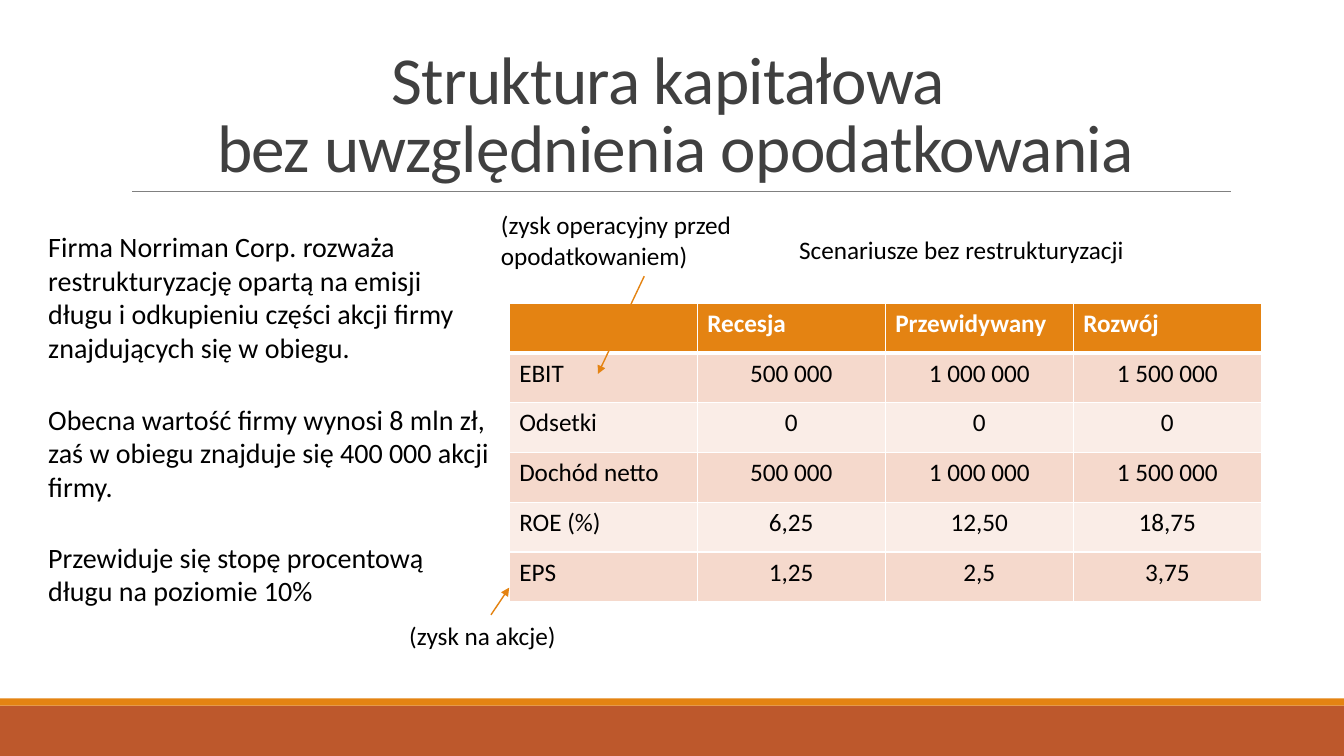
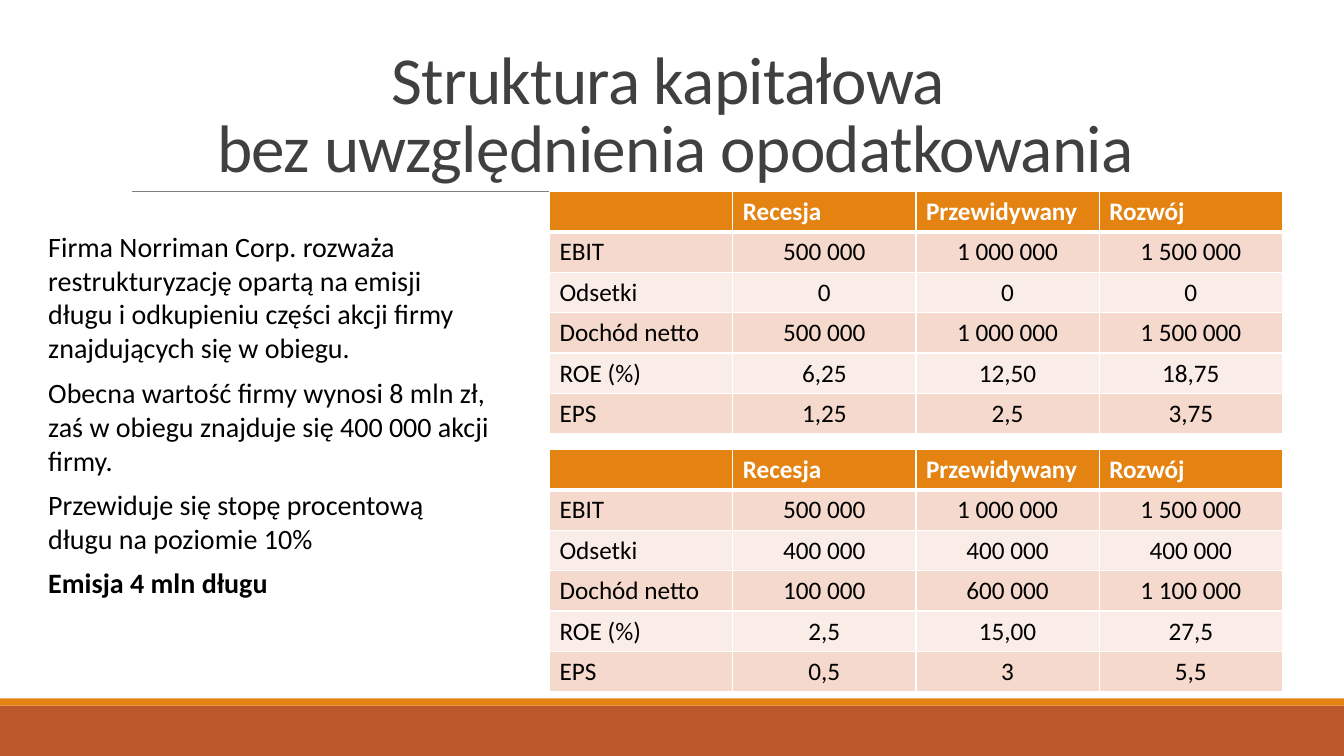
from lxml.etree import SubElement
from pptx import Presentation
from pptx.dml.color import RGBColor
from pptx.enum.shapes import MSO_CONNECTOR as Connector, MSO_SHAPE as Preset
from pptx.enum.text import MSO_ANCHOR as Anchor, PP_ALIGN as Align
from pptx.oxml.ns import qn
from pptx.util import Inches, Pt

SLIDE_W, SLIDE_H = 13.33, 7.5
FONT = "Calibri"
ORANGE, RUST, GREY = "E48312", "BD582C", "808080"
TITLE_GREY, BLACK, WHITE = "404040", "000000", "FFFFFF"
ROW_TINTS = ("FAEDE7", "F5D9CC")

TITLE = "Struktura kapitałowa \vbez uwzględnienia opodatkowania"
CASE = [
    ("Firma Norriman Corp. rozważa restrukturyzację opartą na emisji długu "
     "i odkupieniu części akcji firmy znajdujących się w obiegu.", 1.45),
    ("Obecna wartość firmy wynosi 8 mln zł, zaś w obiegu znajduje się "
     "400 000 akcji firmy.", 1.11),
    ("Przewiduje się stopę procentową długu na poziomie 10%", 0.77),
]
DEBT_ISSUE = ("Emisja 4 mln długu", 0.44)
SCENARIOS = ["", "Recesja", "Przewidywany", "Rozwój"]
EBIT = ["EBIT", "500 000", "1 000 000", "1 500 000"]
WITHOUT_DEBT = [
    SCENARIOS,
    EBIT,
    ["Odsetki", "0", "0", "0"],
    ["Dochód netto", "500 000", "1 000 000", "1 500 000"],
    ["ROE (%)", "6,25", "12,50", "18,75"],
    ["EPS", "1,25", "2,5", "3,75"],
]
WITH_DEBT = [
    SCENARIOS,
    EBIT,
    ["Odsetki", "400 000", "400 000", "400 000"],
    ["Dochód netto", "100 000", "600 000", "1 100 000"],
    ["ROE (%)", "2,5", "15,00", "27,5"],
    ["EPS", "0,5", "3", "5,5"],
]


def rgb(code):
    """Turn a hex string into a colour."""
    return RGBColor.from_string(code)


def inches(box):
    """Turn numbers into lengths."""
    return [Inches(value) for value in box]


def assign(target, values):
    """Set the attributes of a target from a dict."""
    for name, value in values.items():
        setattr(target, name, value)


def write(frame, text, size, color=BLACK, bold=False, align=Align.LEFT):
    """Put one formatted paragraph into a text frame."""
    frame.text = text
    paragraph = frame.paragraphs[0]
    paragraph.alignment = align
    for run in paragraph.runs:
        assign(run.font, {"name": FONT, "size": Pt(size), "bold": bold})
        run.font.color.rgb = rgb(color)
    return paragraph


def add_label(slide, text, box, size=18, **style):
    """Add a wrapped text box."""
    frame = slide.shapes.add_textbox(*inches(box)).text_frame
    frame.word_wrap = True
    write(frame, text, size, **style)


def add_line(slide, start, end, color, width, arrow=False):
    """Add a straight line, with an arrowhead at its end if asked."""
    line = slide.shapes.add_connector(
        Connector.STRAIGHT, *inches(start + end))
    line.line.color.rgb = rgb(color)
    line.line.width = Pt(width)
    if arrow:
        SubElement(line.line._get_or_add_ln(), qn("a:tailEnd"), type="triangle")
    SubElement(line._element.spPr, qn("a:effectLst"))
    return line


def add_band(slide, top, height, color):
    """Add a full-width band."""
    band = slide.shapes.add_shape(
        Preset.RECTANGLE, *inches((0, top, SLIDE_W, height)))
    band.shadow.inherit = False
    band.fill.solid()
    band.fill.fore_color.rgb = rgb(color)
    band.line.fill.background()
    return band


def decorate_layout(slide):
    """Give the layout of a slide its bottom bands and title rule."""
    shared = [
        add_band(slide, 7, 0.5, RUST),
        add_band(slide, 6.93, 0.07, ORANGE),
        add_line(slide, (1.31, 1.9), (12.21, 1.9), GREY, 0.5),
    ]
    for part in shared:
        slide.slide_layout.shapes._spTree.append(part._element)


def add_title(slide, box):
    """Place and format the title."""
    title = slide.shapes.title
    assign(title, dict(zip(("left", "top", "width", "height"), inches(box))))
    assign(title.text_frame,
           {"word_wrap": True, "vertical_anchor": Anchor.BOTTOM})
    paragraph = write(title.text_frame, TITLE, 48, TITLE_GREY,
                      align=Align.CENTER)
    paragraph.line_spacing = 0.85
    for run in paragraph.runs:
        run._r.get_or_add_rPr().set("spc", "-50")


def add_case(slide, left, top, width, statements, gap=0, conclusion=None):
    """Stack the case statements, ending with a bold conclusion."""
    entries = [(entry, False) for entry in statements]
    if conclusion:
        entries.append((conclusion, True))
    for (text, height), bold in entries:
        add_label(slide, text, (left, top, width, height), 20, bold=bold)
        top += height + gap


def set_borders(cell, widths):
    """Draw white cell borders from a dict of side widths."""
    for side, width in widths.items():
        border = SubElement(cell._tc.get_or_add_tcPr(), qn(f"a:ln{side}"),
                            w=str(Pt(width)))
        fill = SubElement(border, qn("a:solidFill"))
        SubElement(fill, qn("a:srgbClr"), val=WHITE)


def add_scenarios(slide, box, rows):
    """Add a scenario table with equal columns and rows."""
    left, top, width, height = box
    table = slide.shapes.add_table(
        len(rows), len(rows[0]), *inches(box)).table
    table.horz_banding = False
    for column in table.columns:
        column.width = Inches(width / len(rows[0]))
    for r, values in enumerate(rows):
        table.rows[r].height = Inches(height / len(rows))
        header = r == 0
        for c, value in enumerate(values):
            cell = table.cell(r, c)
            set_borders(cell, {"L": 1, "R": 1, "T": 3 if r == 1 else 1,
                               "B": 3 if header else 1})
            cell.fill.solid()
            cell.fill.fore_color.rgb = rgb(ORANGE if header else ROW_TINTS[r % 2])
            centred = c > 0 and not header
            write(cell.text_frame, value, 18, WHITE if header else BLACK,
                  header, Align.CENTER if centred else Align.LEFT)


def add_titled_slide(deck):
    """Add a title-only slide with the shared title."""
    slide = deck.slides.add_slide(deck.slide_layouts[5])
    add_title(slide, (1.2, 0.31, 11, 1.59))
    return slide


def build_current_structure(slide):
    """Show the firm before restructuring, with terms explained."""
    add_scenarios(slide, (5.05, 3.01, 7.46, 2.96), WITHOUT_DEBT)
    add_case(slide, 0.38, 2.23, 4.59, CASE, gap=0.26)
    add_label(slide, "Scenariusze bez restrukturyzacji",
              (7.01, 2.28, 5.05, 0.4), align=Align.CENTER)
    add_label(slide, "(zysk na akcje)", (3.96, 6.1, 1.82, 0.4))
    add_line(slide, (4.87, 6.1), (5.05, 5.83), ORANGE, 1, arrow=True)
    add_label(slide, "(zysk operacyjny przed opodatkowaniem)",
              (4.87, 2.03, 3.05, 0.71))
    add_line(slide, (6.39, 2.74), (5.93, 3.71), ORANGE, 1, arrow=True)


def build_debt_comparison(slide):
    """Compare the scenarios without and with the debt issue."""
    add_case(slide, 0.38, 2.23, 4.59, CASE, conclusion=DEBT_ISSUE)
    for top, rows in ((1.9, WITHOUT_DEBT), (4.46, WITH_DEBT)):
        add_scenarios(slide, (5.45, top, 7.27, 2.4), rows)


def main():
    """Build and save the presentation."""
    deck = Presentation()
    assign(deck, {"slide_width": Inches(SLIDE_W),
                  "slide_height": Inches(SLIDE_H)})
    current = add_titled_slide(deck)
    decorate_layout(current)
    build_current_structure(current)
    build_debt_comparison(add_titled_slide(deck))
    deck.save("out.pptx")


if __name__ == "__main__":
    main()
